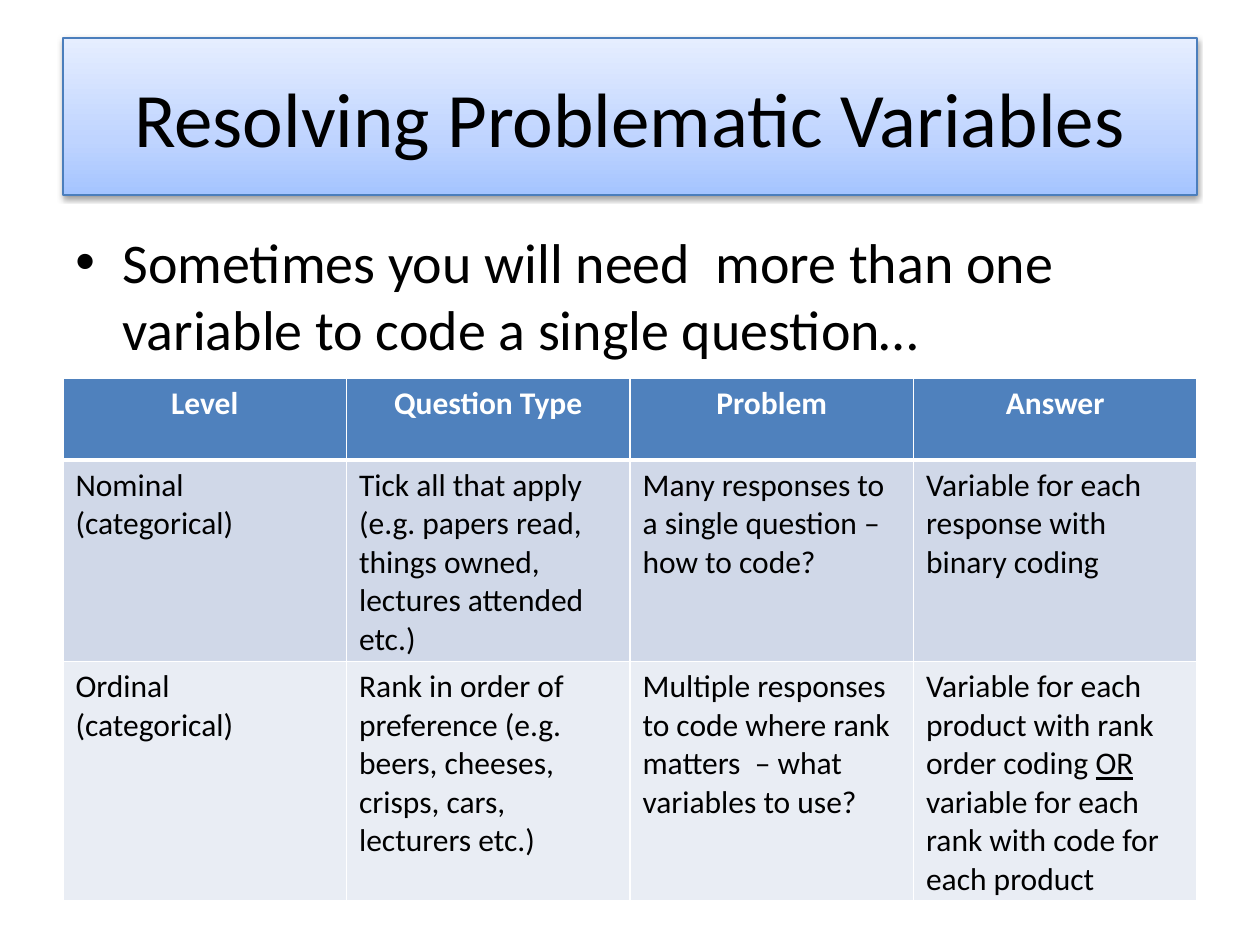
from copy import deepcopy

from lxml.etree import SubElement
from pptx import Presentation
from pptx.dml.color import RGBColor
from pptx.enum.shapes import MSO_SHAPE
from pptx.enum.text import MSO_ANCHOR, PP_ALIGN
from pptx.oxml.ns import qn
from pptx.util import Emu, Pt

PX = 914400 / 126
FONT = "Calibri"
BLACK = RGBColor(0x00, 0x00, 0x00)
WHITE = RGBColor(0xFF, 0xFF, 0xFF)
BLUE = RGBColor(0x4F, 0x81, 0xBD)
OUTLINE = RGBColor(0x4B, 0x7E, 0xBC)
BAND_FILLS = [RGBColor(0xD0, 0xD8, 0xE8), RGBColor(0xE9, 0xED, 0xF4)]
TITLE_STOPS = [
    (0, RGBColor(0xA4, 0xC4, 0xFF)),
    (0.35, RGBColor(0xBF, 0xD4, 0xFF)),
    (1, RGBColor(0xE6, 0xEE, 0xFF)),
]

ROW_HEIGHTS = [82, 179, 179]
HEADERS = ["Level", "Question Type", "Problem", "Answer"]
# A cell is a list of spans; every second span is underlined.
BODY_ROWS = [
    [
        ["Nominal (categorical)"],
        ["Tick all that apply (e.g. papers read, things owned, lectures attended etc.)"],
        ["Many responses to a single question – how to code?"],
        ["Variable for each response with binary coding"],
    ],
    [
        ["Ordinal (categorical)"],
        ["Rank in order of preference (e.g. beers, cheeses, crisps, cars, lecturers etc.)"],
        ["Multiple responses to code where rank matters  – what variables to use?"],
        ["Variable for each product with rank order coding ", "OR",
         " variable for each rank with code for each product"],
    ],
]


def px(length):
    return Emu(round(length * PX))


def scaled(box):
    return [px(length) for length in box]


def style_span(span, size, color=BLACK, bold=False):
    span.font.name = FONT
    span.font.size = Pt(size)
    span.font.color.rgb = color
    span.font.bold = bold


def add_soft_shadow(shape):
    shape.shadow.inherit = False
    effects = shape.element.spPr.find(qn("a:effectLst"))
    shadow = SubElement(effects, qn("a:outerShdw"), blurRad=str(Pt(3.1)),
                        dist=str(Pt(1.6)), dir="5400000", rotWithShape="0")
    color = SubElement(shadow, qn("a:srgbClr"), val=str(BLACK))
    SubElement(color, qn("a:alpha"), val="38000")


def add_title(slide, box, text):
    banner = slide.shapes.add_shape(MSO_SHAPE.RECTANGLE, *scaled(box))
    banner.fill.gradient()
    banner.fill.gradient_angle = 90
    stop_list = banner.element.spPr.find(".//" + qn("a:gsLst"))
    stop_list.append(deepcopy(stop_list[-1]))
    for stop, (position, color) in zip(banner.fill.gradient_stops, TITLE_STOPS):
        stop.position = position
        stop.color.rgb = color
    banner.line.color.rgb = OUTLINE
    banner.line.width = Pt(0.75)
    add_soft_shadow(banner)

    frame = banner.text_frame
    frame.word_wrap = True
    frame.vertical_anchor = MSO_ANCHOR.MIDDLE
    frame.text = text
    para = frame.paragraphs[0]
    para.alignment = PP_ALIGN.CENTER
    style_span(para.runs[0], 44)


def add_bullet(slide, box, text):
    frame = slide.shapes.add_textbox(*scaled(box)).text_frame
    frame.word_wrap = True
    frame.text = text
    para = frame.paragraphs[0]
    para.space_before = Pt(6.4)
    style_span(para.runs[0], 32)
    properties = para._p.get_or_add_pPr()
    indent = px(47)
    properties.set("marL", str(indent))
    properties.set("indent", str(-indent))
    SubElement(properties, qn("a:buFont"), typeface="Arial")
    SubElement(properties, qn("a:buChar"), char="•")


def paint_cell(cell, fill, bottom_width=1):
    """Draw white borders, then the fill, which must follow them in the XML."""
    properties = cell._tc.get_or_add_tcPr()
    for side, width in [("L", 1), ("R", 1), ("T", 1), ("B", bottom_width)]:
        border = SubElement(properties, qn("a:ln" + side), w=str(Pt(width)))
        solid = SubElement(border, qn("a:solidFill"))
        SubElement(solid, qn("a:srgbClr"), val=str(WHITE))
    cell.fill.solid()
    cell.fill.fore_color.rgb = fill


def add_variable_table(slide, box):
    table = slide.shapes.add_table(len(ROW_HEIGHTS), len(HEADERS), *scaled(box)).table
    for row, height in zip(table.rows, ROW_HEIGHTS):
        row.height = px(height)

    for cell, header in zip(table.rows[0].cells, HEADERS):
        paint_cell(cell, BLUE, bottom_width=3)
        cell.text_frame.text = header
        para = cell.text_frame.paragraphs[0]
        para.alignment = PP_ALIGN.CENTER
        style_span(para.runs[0], 18, WHITE, bold=True)

    for index, (texts, fill) in enumerate(zip(BODY_ROWS, BAND_FILLS), start=1):
        for cell, spans in zip(table.rows[index].cells, texts):
            paint_cell(cell, fill)
            para = cell.text_frame.paragraphs[0]
            for position, text in enumerate(spans):
                span = para.add_run()
                span.text = text
                style_span(span, 18)
                span.font.underline = position % 2 == 1


def main():
    deck = Presentation()
    deck.slide_width, deck.slide_height = px(1260), px(945)
    slide = deck.slides.add_slide(deck.slide_layouts[6])
    left, width = 63, 1134
    add_title(slide, (left, 38, width, 157), "Resolving Problematic Variables")
    add_bullet(slide, (left, 221, width, 624),
               "Sometimes you will need  more than one variable to code a single question…")
    add_variable_table(slide, (left, 378, width, sum(ROW_HEIGHTS)))
    deck.save("out.pptx")


if __name__ == "__main__":
    main()
